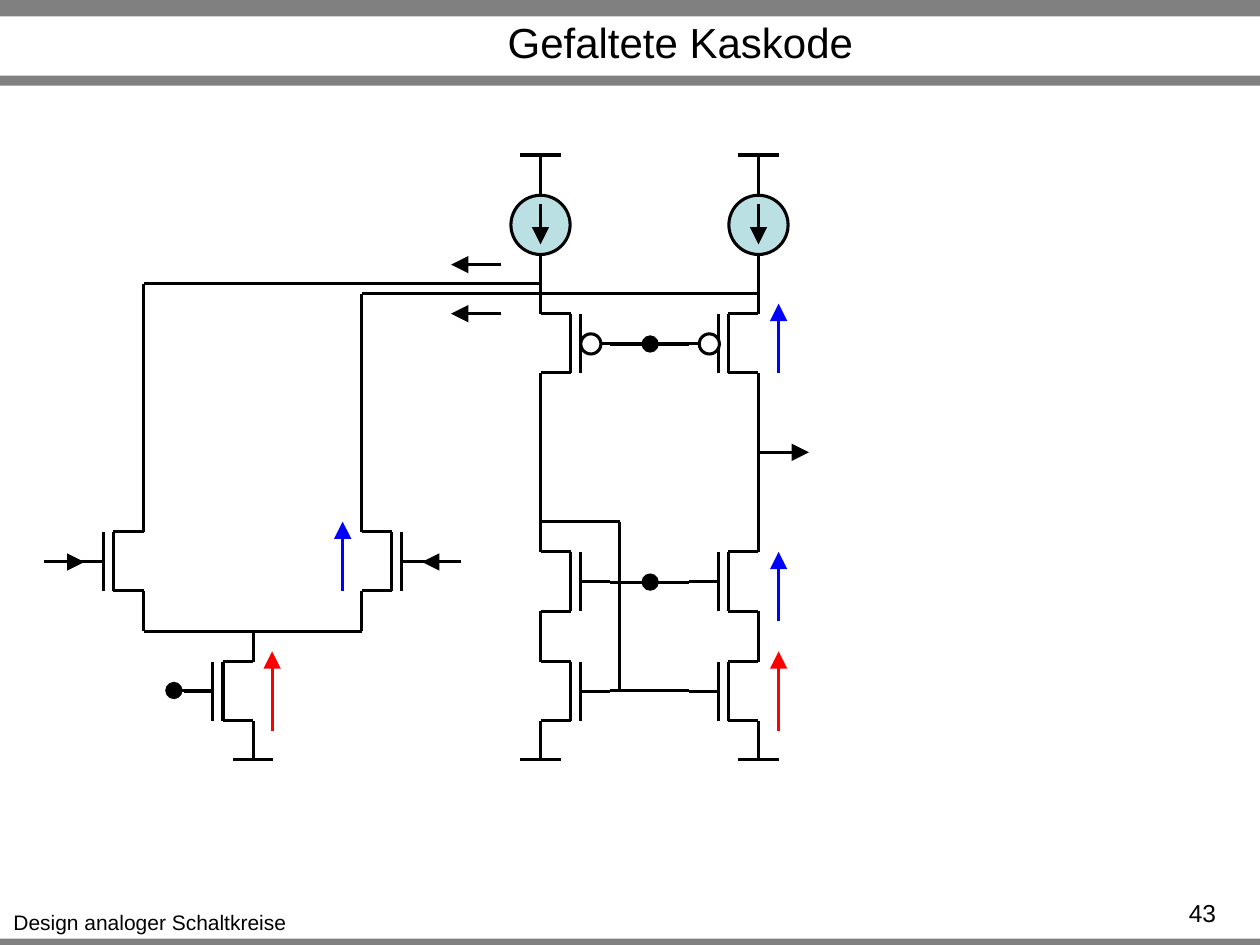
import pptx
import pptx.dml.color
import pptx.enum.shapes
import pptx.enum.text
import pptx.oxml
import pptx.oxml.ns
import pptx.util
from pptx.util import Inches

COLOR = pptx.dml.color.RGBColor.from_string
SHAPE = pptx.enum.shapes.MSO_SHAPE
ALIGN = pptx.enum.text.PP_ALIGN

THEME = {
    "font": "Arial", "title": 24, "number": 14, "footer": 12, "line": 1.75,
    "black": COLOR("000000"), "white": COLOR("FFFFFF"), "bar": COLOR("808080"),
    "source": COLOR("BBE0E3"), "red": COLOR("FF0000"), "blue": COLOR("0000FF"),
}

deck = pptx.Presentation()
deck.slide_width, deck.slide_height = Inches(10), Inches(7.5)
page = deck.slides.add_slide(deck.slide_layouts[5])


def wire(x1, y1, x2, y2, color="black", tip=None):
    """Straight line, with an optional large head at its end."""
    line = page.shapes.add_connector(
        pptx.enum.shapes.MSO_CONNECTOR.STRAIGHT,
        Inches(x1), Inches(y1), Inches(x2), Inches(y2))
    line.line.color.rgb = THEME[color]
    line.line.width = pptx.util.Pt(THEME["line"])
    if tip:
        head = pptx.oxml.parse_xml(
            f'<a:tailEnd {pptx.oxml.ns.nsdecls("a")} type="{tip}" w="lg" len="lg"/>')
        line.line._get_or_add_ln().append(head)
    line._element.spPr.append(
        pptx.oxml.parse_xml(f'<a:effectLst {pptx.oxml.ns.nsdecls("a")}/>'))


def solid(kind, left, top, width, height, fill, outlined=True):
    """Filled preset shape, with or without a black outline."""
    shape = page.shapes.add_shape(
        kind, Inches(left), Inches(top), Inches(width), Inches(height))
    shape.shadow.inherit = False
    shape.fill.solid()
    shape.fill.fore_color.rgb = THEME[fill]
    if outlined:
        shape.line.color.rgb = THEME["black"]
        shape.line.width = pptx.util.Pt(THEME["line"])
    else:
        shape.line.fill.background()


# Grey bars
for top, height in [(7.45, 0.08), (0, 0.13), (0.6, 0.08)]:
    solid(SHAPE.RECTANGLE, 0, top, 10, height, "bar", outlined=False)

# Title, footer and page number
title = page.shapes.title
title.left, title.top, title.width, title.height = map(Inches, (1.3, 0.14, 8.2, 0.38))
title.text_frame.vertical_anchor = pptx.enum.text.MSO_ANCHOR.MIDDLE
footer = page.shapes.add_textbox(Inches(0), Inches(7.17), Inches(2.38), Inches(0.3))
number = page.shapes.add_textbox(Inches(5.92), Inches(7.08), Inches(3.83), Inches(0.42))
for box, text, size, align, wrap in [
        (title, "Gefaltete Kaskode", "title", ALIGN.CENTER, True),
        (footer, "Design analoger Schaltkreise", "footer", ALIGN.CENTER, False),
        (number, "43", "number", ALIGN.RIGHT, True)]:
    box.text_frame.text = text
    box.text_frame.word_wrap = wrap
    paragraph = box.text_frame.paragraphs[0]
    paragraph.alignment = align
    span = paragraph.runs[0]
    span.font.name = THEME["font"]
    span.font.size = pptx.util.Pt(THEME[size])
    span.font.color.rgb = THEME["black"]

# Node columns of the circuit
IN_LEFT, TAIL, IN_RIGHT, LEFT, RIGHT = 1.14, 2.01, 2.87, 4.29, 6.02
CASCODE, INPUT, UPPER, LOWER, GROUND = 2.49, 4.22, 4.38, 5.25, 6.03
GATE, CHANNEL = 0.235, 0.47

# Transistors: node column, top, side on which the gate lies
for x, top, side in [
        (IN_LEFT, INPUT, -1), (IN_RIGHT, INPUT, 1), (TAIL, LOWER, -1),
        (LEFT, CASCODE, 1), (RIGHT, CASCODE, -1),
        (LEFT, UPPER, 1), (RIGHT, UPPER, -1),
        (LEFT, LOWER, 1), (RIGHT, LOWER, -1)]:
    channel, plate = x + 0.24 * side, x + 0.32 * side
    wire(x, top, channel, top)
    wire(x, top + CHANNEL, channel, top + CHANNEL)
    wire(channel, top, channel, top + CHANNEL)
    wire(plate, top, plate, top + CHANNEL)
    wire(plate, top + GATE, x + 0.55 * side, top + GATE)

# Vertical wires
for x, y1, y2 in [
        (IN_LEFT, 2.25, INPUT), (IN_LEFT, 4.69, 5.01),
        (IN_RIGHT, 2.33, INPUT), (IN_RIGHT, 4.69, 5.01),
        (TAIL, 5.01, LOWER), (TAIL, 5.72, GROUND), (4.92, 4.14, 5.48)]:
    wire(x, y1, x, y2)
for x in (LEFT, RIGHT):
    for y1, y2 in [(1.23, 1.55), (2.02, CASCODE), (2.96, UPPER),
                   (4.85, LOWER), (5.72, GROUND)]:
        wire(x, y1, x, y2)

# Horizontal wires
for x1, x2, y in [
        (IN_LEFT, LEFT, 2.25), (IN_RIGHT, RIGHT, 2.33), (IN_LEFT, IN_RIGHT, 5.01),
        (LEFT, 4.92, 4.14), (4.84, 5.47, 2.73), (4.84, 5.47, 4.62), (4.84, 5.47, 5.48)]:
    wire(x1, y, x2, y)

# Supply and ground bars
for x, y in [(LEFT, 1.23), (RIGHT, 1.23), (TAIL, GROUND), (LEFT, GROUND), (RIGHT, GROUND)]:
    wire(x - 0.16, y, x + 0.16, y)

# Inverting gates and bias dots
for left in (4.61, 5.55):
    solid(SHAPE.OVAL, left, 2.65, 0.16, 0.16, "white")
for x, y in [(1.38, 5.48), (5.16, 4.62), (5.16, 2.73)]:
    wire(x + 0.31, y, x, y, tip="oval")

# Current sources
for x in (LEFT, RIGHT):
    solid(SHAPE.OVAL, x - 0.235, 1.55, 0.47, 0.47, "source")
    wire(x, 1.62, x, 1.94, tip="triangle")

# Signal and voltage arrows
for x1, y1, x2, y2, color in [
        (2.16, 5.8, 2.16, 5.17, "red"), (6.18, 5.8, 6.18, 5.17, "red"),
        (2.72, 4.69, 2.72, 4.14, "blue"), (6.18, 4.93, 6.18, 4.38, "blue"),
        (6.18, 2.96, 6.18, 2.41, "blue"),
        (RIGHT, 3.59, 6.42, 3.59, "black"), (0.35, 4.46, 0.67, 4.46, "black"),
        (3.66, 4.46, 3.35, 4.46, "black"),
        (3.98, 2.1, 3.58, 2.1, "black"), (3.98, 2.49, 3.58, 2.49, "black")]:
    wire(x1, y1, x2, y2, color, "triangle")

deck.save("out.pptx")
